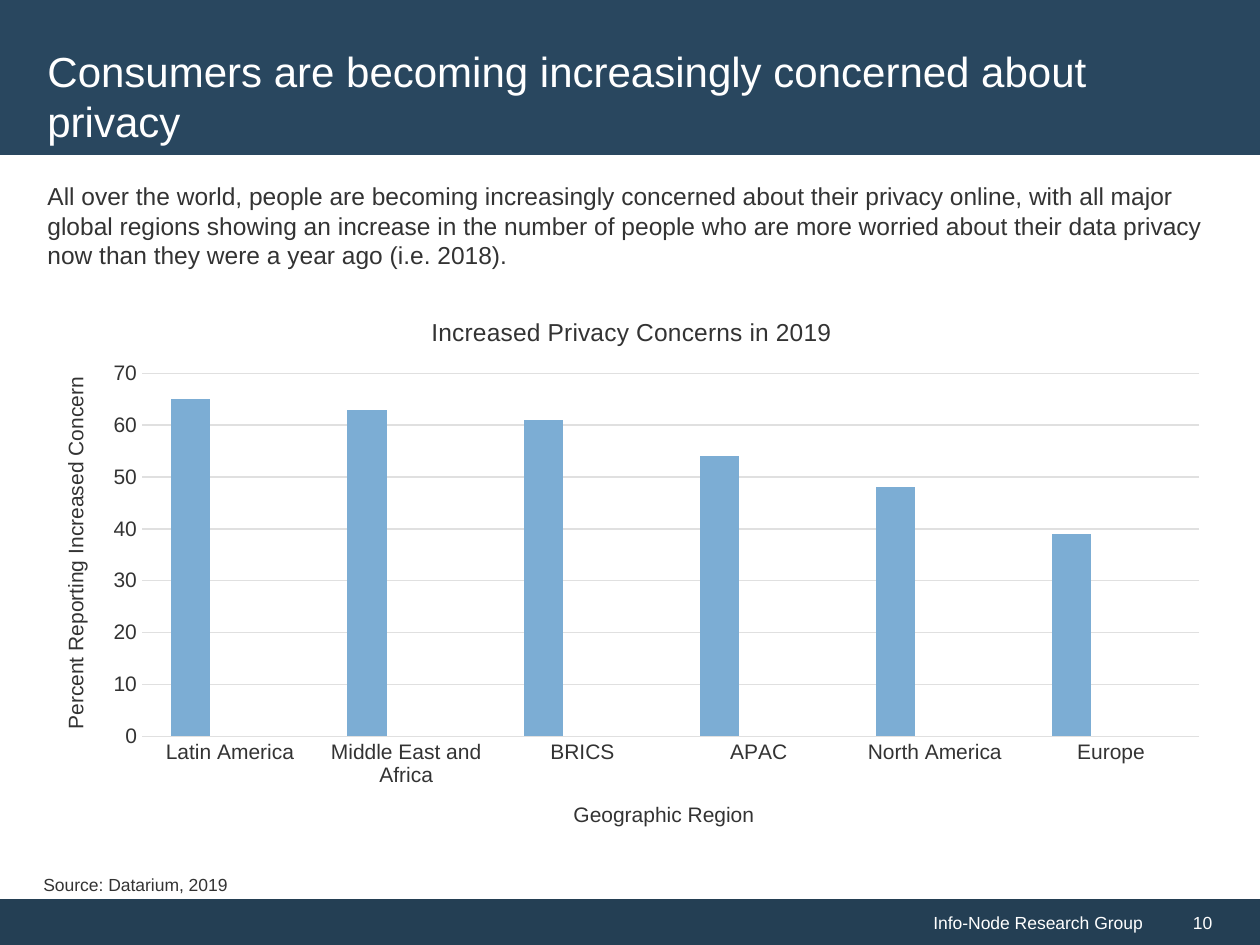
from lxml import etree
from pptx import Presentation
from pptx.chart.data import CategoryChartData
from pptx.dml.color import RGBColor
from pptx.enum.chart import XL_CHART_TYPE, XL_TICK_MARK
from pptx.enum.shapes import MSO_SHAPE
from pptx.enum.text import MSO_ANCHOR, PP_ALIGN
from pptx.oxml.ns import qn
from pptx.util import Emu, Pt

PX = 914400 / 126
FONT = "Arial"
WHITE = RGBColor(0xFF, 0xFF, 0xFF)
TEXT = RGBColor(0x33, 0x33, 0x33)
BANNER = RGBColor(0x29, 0x47, 0x5F)
FOOTER = RGBColor(0x24, 0x3F, 0x54)
GRID = RGBColor(0xE0, 0xE0, 0xE0)
BLUE = RGBColor(0x7C, 0xAD, 0xD4)
GOLD = RGBColor(0xD9, 0xA2, 0x10)
COLUMN = XL_CHART_TYPE.COLUMN_CLUSTERED
NO_TICK = XL_TICK_MARK.NONE
RECT = MSO_SHAPE.RECTANGLE
TOP, MIDDLE = MSO_ANCHOR.TOP, MSO_ANCHOR.MIDDLE
LEFT, RIGHT = PP_ALIGN.LEFT, PP_ALIGN.RIGHT


def set_text(tf, text, size, color, anchor=TOP, align=LEFT):
    tf.word_wrap = True
    tf.vertical_anchor = anchor
    p = tf.paragraphs[0]
    p.text = text
    p.alignment = align
    p.font.name = FONT
    p.font.size = Pt(size)
    p.font.bold = False
    p.font.color.rgb = color


def set_layout(parent, index, **values):
    """Give a chart part a manual layout, in fractions of the chart."""
    layout = parent.find(qn("c:layout"))
    if layout is not None:
        parent.remove(layout)
    layout = etree.Element(qn("c:layout"))
    manual = etree.SubElement(layout, qn("c:manualLayout"))
    for name, value in values.items():
        etree.SubElement(manual, qn("c:" + name)).set("val", str(value))
    parent.insert(index, layout)


prs = Presentation()
prs.slide_width, prs.slide_height = Emu(9144000), Emu(6858000)
slide = prs.slides.add_slide(prs.slide_layouts[6])

# Banner and footer bands
bands = [
    (0, 0, 1260, 155, BANNER, "", LEFT, 0),
    (0, 899, 1155, 46, FOOTER, "Info-Node Research Group", RIGHT, 0),
    (1155, 899, 105, 46, FOOTER, "10", LEFT, 25),
]
for x, y, w, h, color, text, align, indent in bands:
    sp = slide.shapes.add_shape(RECT, *(Emu(round(v * PX)) for v in (x, y, w, h)))
    sp.shadow.inherit = False
    sp.fill.solid()
    sp.fill.fore_color.rgb = color
    sp.line.fill.background()
    if text:
        set_text(sp.text_frame, text, 10, WHITE, MIDDLE, align)
        sp.text_frame.margin_left = Emu(round((13 + indent) * PX))

# Title, introduction and source
texts = [
    (35, 35, 1188, 121, 24, WHITE, MIDDLE,
     "Consumers are becoming increasingly concerned about privacy"),
    (35, 175, 1188, 102, 14, TEXT, TOP,
     "All over the world, people are becoming increasingly concerned about their "
     "privacy online, with all major global regions showing an increase in the "
     "number of people who are more worried about their data privacy now than "
     "they were a year ago (i.e. 2018)."),
    (31, 868, 240, 34, 10, TEXT, TOP, "Source: Datarium, 2019"),
]
for x, y, w, h, size, color, anchor, text in texts:
    box = slide.shapes.add_textbox(*(Emu(round(v * PX)) for v in (x, y, w, h)))
    set_text(box.text_frame, text, size, color, anchor)

# Chart: the two empty series keep the columns at the left of each group
data = CategoryChartData()
data.categories = ["Latin America", "Middle East and Africa", "BRICS", "APAC",
                   "North America", "Europe"]
data.add_series("Series 1", (65, 63, 61, 54, 48, 39))
data.add_series("Series 2", [None] * 6)
data.add_series("Series 3", [None] * 6)
frame = slide.shapes.add_chart(
    COLUMN, *(Emu(round(v * PX)) for v in (35, 295, 1188, 559)), data)
chart = frame.chart
chart.has_legend = False
chart.font.name = FONT
chart.font.size = Pt(10)
chart.font.color.rgb = TEXT

plot = chart.plots[0]
plot.gap_width = 150
plot.overlap = 0
plot.vary_by_categories = False
for series, color in zip(plot.series, (BLUE, GOLD, BLUE)):
    series.format.fill.solid()
    series.format.fill.fore_color.rgb = color

cat_axis, val_axis = chart.category_axis, chart.value_axis
for axis in (cat_axis, val_axis):
    axis.major_tick_mark = axis.minor_tick_mark = NO_TICK
    axis.format.line.fill.background()
    axis.tick_labels.font.name = FONT
    axis.tick_labels.font.size = Pt(12)
    axis.tick_labels.font.color.rgb = TEXT
val_axis.minimum_scale, val_axis.maximum_scale, val_axis.major_unit = 0, 70, 10
val_axis.major_gridlines.format.line.color.rgb = GRID
val_axis.major_gridlines.format.line.width = Pt(0.75)

titles = [
    (chart.chart_title, "Increased Privacy Concerns in 2019", 14, 0.33, 0.03),
    (cat_axis.axis_title, "Geographic Region", 12, 0.45, 0.9),
    (val_axis.axis_title, "Percent Reporting Increased Concern", 12, 0.02, 0.14),
]
for title, text, size, x, y in titles:
    p = title.text_frame.paragraphs[0]
    p.text = text
    p.font.name = FONT
    p.font.size = Pt(size)
    p.font.bold = False
    p.font.color.rgb = TEXT
    set_layout(title._element, 1, xMode="edge", yMode="edge", x=x, y=y)
val_axis.axis_title.text_frame._txBody.bodyPr.set("rot", "-5400000")
set_layout(chart._chartSpace.chart.plotArea, 0, layoutTarget="inner",
           xMode="edge", yMode="edge", x=0.09, y=0.14, w=0.89, h=0.65)

prs.save("out.pptx")
